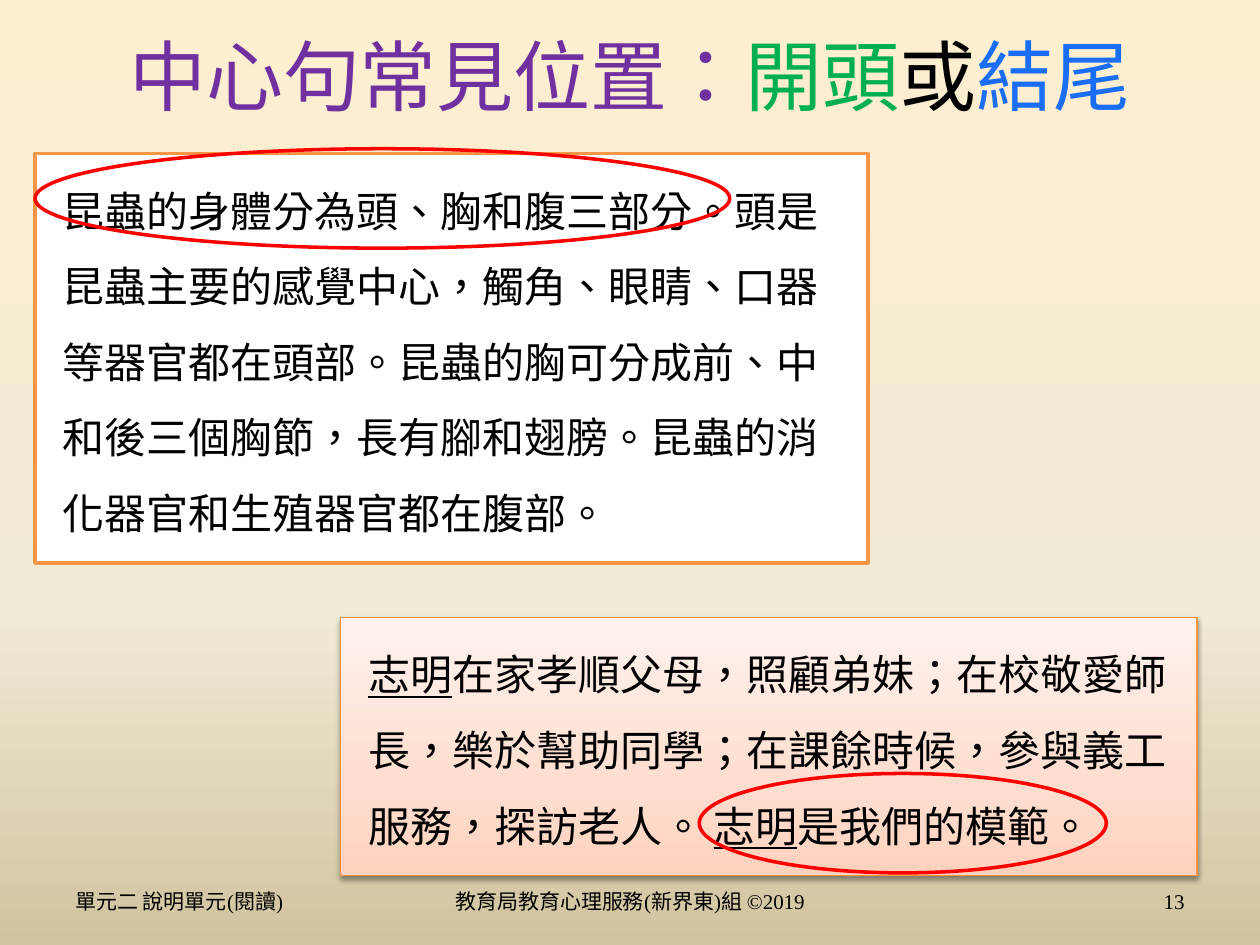
from copy import deepcopy
from lxml import etree
from pptx import Presentation
from pptx.dml.color import RGBColor as RGB
from pptx.enum.lang import MSO_LANGUAGE_ID as Lang
from pptx.enum.shapes import MSO_SHAPE as Shape
from pptx.enum.text import MSO_ANCHOR as Anchor, PP_ALIGN as Align
from pptx.oxml import parse_xml
from pptx.util import Pt

BLACK = RGB(0x00, 0x00, 0x00)
WHITE = RGB(0xFF, 0xFF, 0xFF)
RED = RGB(0xFF, 0x00, 0x00)
PURPLE = RGB(0x70, 0x30, 0xA0)
GREEN = RGB(0x00, 0xB0, 0x50)
BLUE = RGB(0x1A, 0x6E, 0xF6)
ORANGE = RGB(0xF7, 0x96, 0x46)
AMBER = RGB(0xF6, 0x92, 0x40)
SAND = [(0, RGB(0xFF, 0xEF, 0xD1)), (65, RGB(0xF0, 0xEB, 0xD5)),
        (100, RGB(0xD1, 0xC3, 0x9F))]
PEACH = [(0, RGB(0xFF, 0xD2, 0xBD)), (35, RGB(0xFF, 0xDE, 0xD0)),
         (100, RGB(0xFF, 0xF2, 0xED))]
SANS, SERIF = "Noto Sans CJK SC", "Times New Roman"
NS = "http://schemas.openxmlformats.org/drawingml/2006/main"


def blend(fill, stops, angle):
    """Fill with a three-stop gradient; the angle runs counter-clockwise."""
    fill.gradient()
    fill.gradient_angle = angle
    first = fill.gradient_stops[0]._gs
    first.addnext(deepcopy(first))
    for stop, (place, color) in zip(fill.gradient_stops, stops):
        stop.position = place / 100
        stop.color.rgb = color


def write(frame, runs, size, align=Align.LEFT):
    """Write runs of (text, font, colour, underline) as one paragraph."""
    frame.word_wrap = True
    para = frame.paragraphs[0]
    para.alignment = align
    para.font.size = Pt(size)
    for text, name, color, under in runs:
        run = para.add_run()
        run.text = text
        font = run.font
        font.size, font.name = Pt(size), name
        font.color.rgb = color
        font.underline = under
        font.language_id = Lang.TRADITIONAL_CHINESE
        ea = etree.SubElement(font._element, f"{{{NS}}}ea")
        ea.set("typeface", SANS)
    return para


deck = Presentation()
deck.slide_width, deck.slide_height = Pt(720), Pt(540)
slide = deck.slides.add_slide(deck.slide_layouts[6])
blend(slide.background.fill, SAND, 270)

# Passages, each with a ring around its central sentence
insect = [("昆蟲的身體分為頭、胸和腹三部分。頭是昆蟲主要的感覺中心，觸角、眼睛、"
           "口器等器官都在頭部。昆蟲的胸可分成前、中和後三個胸節，長有腳和翅膀。"
           "昆蟲的消化器官和生殖器官都在腹部。", SANS, BLACK, False)]
pupil = [("志明", SERIF, BLACK, True),
         ("在家孝順父母，照顧弟妹；在校敬愛師長，樂於幫助同學；"
          "在課餘時候，參與義工服務，探訪老人。 ", SERIF, BLACK, False),
         ("志明", SERIF, BLACK, True),
         ("是我們的模範。", SERIF, BLACK, False)]
passages = [
    (insect, (20, 87.8, 476, 234), ORANGE, 2, 12, (20, 85, 397, 56.8)),
    (pupil, (194.4, 352.8, 489.6, 147.6), AMBER, 0.75, 4.8,
     (399.6, 442, 232.6, 56.8)),
]
for runs, area, edge, width, before, ring in passages:
    box = slide.shapes.add_shape(Shape.RECTANGLE, *map(Pt, area))
    box.shadow.inherit = False
    box.line.color.rgb = edge
    box.line.width = Pt(width)
    if runs is insect:
        box.fill.solid()
        box.fill.fore_color.rgb = WHITE
    else:
        blend(box.fill, PEACH, 90)
        box._element.spPr.find(f"{{{NS}}}effectLst").append(parse_xml(
            f'<a:outerShdw xmlns:a="{NS}" blurRad="{Pt(3.1)}" '
            f'dist="{Pt(1.6)}" dir="5400000" rotWithShape="0">'
            '<a:srgbClr val="000000"><a:alpha val="38000"/></a:srgbClr>'
            '</a:outerShdw>'))
    frame = box.text_frame
    frame.vertical_anchor = Anchor.TOP
    frame.margin_left = Pt(16)
    para = write(frame, runs, 24)
    para.line_spacing = 1.5
    para.space_before = Pt(before)

    oval = slide.shapes.add_shape(Shape.OVAL, *map(Pt, ring))
    oval.shadow.inherit = False
    oval.fill.background()
    oval.line.color.rgb = RED
    oval.line.width = Pt(2)

# Title and footer
title = [("中心句常見位置：", SERIF, PURPLE, False), ("開頭", SANS, GREEN, False),
         ("或", SANS, BLACK, False), ("結尾", SANS, BLUE, False)]
unit = [("單元二 說明單元(閱讀)", SERIF, BLACK, False)]
owner = [("教育局教育心理服務(新界東)組 ©2019", SERIF, BLACK, False)]
page = [("13", SERIF, BLACK, False)]
labels = [
    (title, (36, 6, 648, 73.4), 44, Align.CENTER),
    (unit, (36, 500.5, 168, 28.75), 12, Align.LEFT),
    (owner, (246, 500.5, 228, 28.75), 12, Align.CENTER),
    (page, (516, 500.5, 168, 28.75), 12, Align.RIGHT),
]
for runs, area, size, align in labels:
    frame = slide.shapes.add_textbox(*map(Pt, area)).text_frame
    frame.vertical_anchor = Anchor.MIDDLE
    write(frame, runs, size, align)

deck.save("out.pptx")
